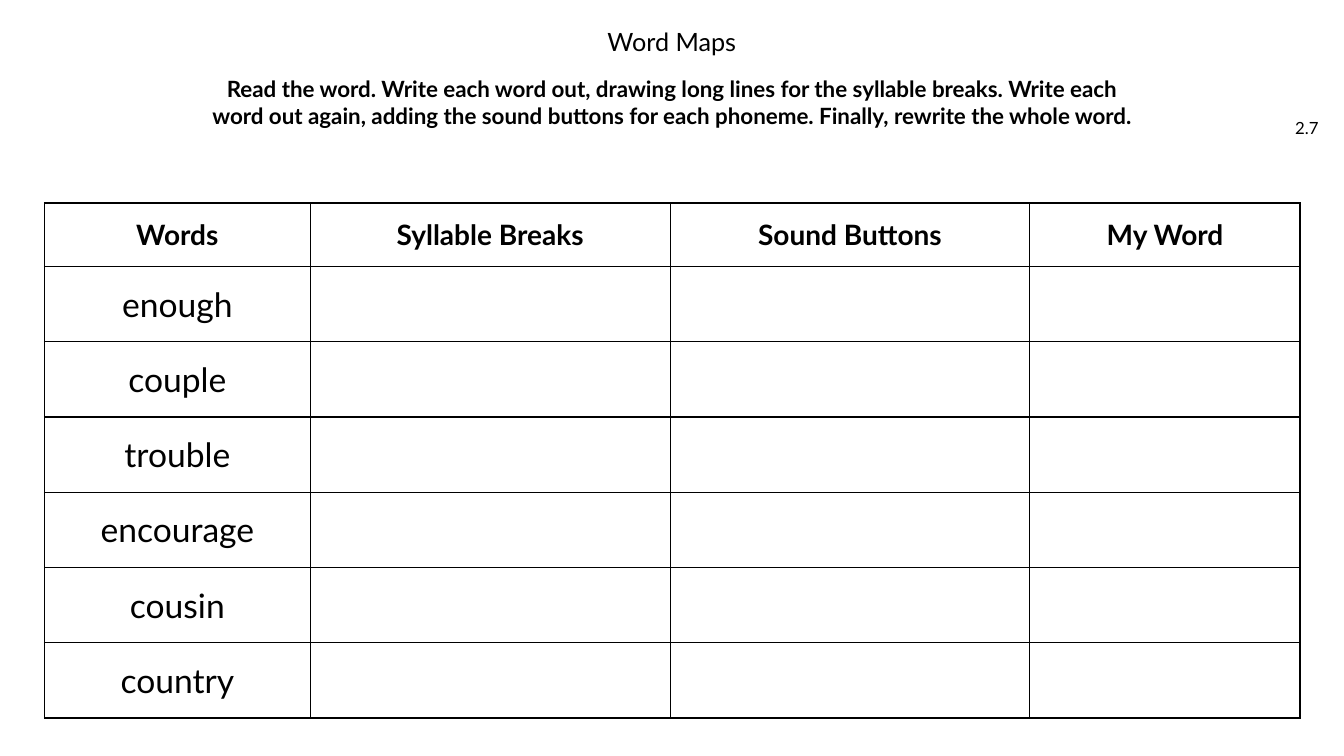
"""Build the Word Maps worksheet slide."""
import pptx
import pptx.dml.color
import pptx.enum.text
import pptx.oxml
import pptx.oxml.ns
import pptx.util

Pt = pptx.util.Pt
ALIGN = pptx.enum.text.PP_ALIGN
ANCHOR = pptx.enum.text.MSO_ANCHOR

COLOURS = {"ink": "000000", "paper": "FFFFFF"}
FONT = "Lato"
TITLE = "Word Maps"
INSTRUCTIONS = (
    "Read the word. Write each word out, drawing long lines for the syllable breaks. "
    "Write each word out again, adding the sound buttons for each phoneme. "
    "Finally, rewrite the whole word."
)
LESSON = "2.7"
HEADINGS = ["Words", "Syllable Breaks", "Sound Buttons", "My Word"]
WORDS = ["enough", "couple", "trouble", "encourage", "cousin", "country"]

TABLE_LEFT, TABLE_TOP = 31.7, 145
COLUMN_WIDTHS = [190, 257, 257, 193]
HEADING_HEIGHT, WORD_HEIGHT = 45.4, 53.75
BORDER_WIDTH = 1


def write(frame, text, size, bold=False, align=ALIGN.CENTER):
    """Write one styled run into the first paragraph of a frame."""
    para = frame.paragraphs[0]
    para.alignment = align
    span = para.add_run()
    span.text = text
    span.font.name = FONT
    span.font.size = Pt(size)
    span.font.bold = bold
    span.font.color.rgb = pptx.dml.color.RGBColor.from_string(COLOURS["ink"])
    return para


def add_text(page, bounds, text, size, anchor=ANCHOR.MIDDLE, **style):
    """Add a wrapped text box and return its paragraph."""
    box = page.shapes.add_textbox(*map(Pt, bounds))
    box.text_frame.word_wrap = True
    box.text_frame.vertical_anchor = anchor
    return write(box.text_frame, text, size, **style)


def style_cell(cell):
    """Give a cell a plain fill and a thin border on each side."""
    cell.vertical_anchor = ANCHOR.MIDDLE
    properties = cell._tc.get_or_add_tcPr()
    for side in ("lnL", "lnR", "lnT", "lnB"):
        properties.append(pptx.oxml.parse_xml(
            f'<a:{side} {pptx.oxml.ns.nsdecls("a")} w="{Pt(BORDER_WIDTH)}">'
            f'<a:solidFill><a:srgbClr val="{COLOURS["ink"]}"/></a:solidFill></a:{side}>'
        ))
    cell.fill.solid()
    cell.fill.fore_color.rgb = pptx.dml.color.RGBColor.from_string(COLOURS["paper"])


def add_word_table(page):
    """Add the table with a heading row and one row for each word."""
    heights = [HEADING_HEIGHT] + [WORD_HEIGHT] * len(WORDS)
    table = page.shapes.add_table(
        len(heights), len(HEADINGS), Pt(TABLE_LEFT), Pt(TABLE_TOP),
        Pt(sum(COLUMN_WIDTHS)), Pt(sum(heights)),
    ).table
    table.horz_banding = False
    for column, width in zip(table.columns, COLUMN_WIDTHS):
        column.width = Pt(width)
    for row, height in zip(table.rows, heights):
        row.height = Pt(height)
    for cell in table.iter_cells():
        style_cell(cell)
    for index, heading in enumerate(HEADINGS):
        write(table.cell(0, index).text_frame, heading, 20, bold=True)
    for index, word in enumerate(WORDS, 1):
        write(table.cell(index, 0).text_frame, word, 24)


def main():
    """Build and save the deck."""
    deck = pptx.Presentation()
    deck.slide_width, deck.slide_height = Pt(960), Pt(540)
    page = deck.slides.add_slide(deck.slide_layouts[6])
    add_text(page, (903.6, 77, 45.4, 28.8), LESSON, 12, align=ALIGN.RIGHT)
    add_text(page, (141.8, 43.2, 676.8, 59), INSTRUCTIONS, 16, bold=True)
    title = add_text(page, (275, 18, 409.7, 25.2), TITLE, 18, anchor=ANCHOR.TOP)
    title.line_spacing = 0.9
    add_word_table(page)
    deck.save("out.pptx")


if __name__ == "__main__":
    main()
